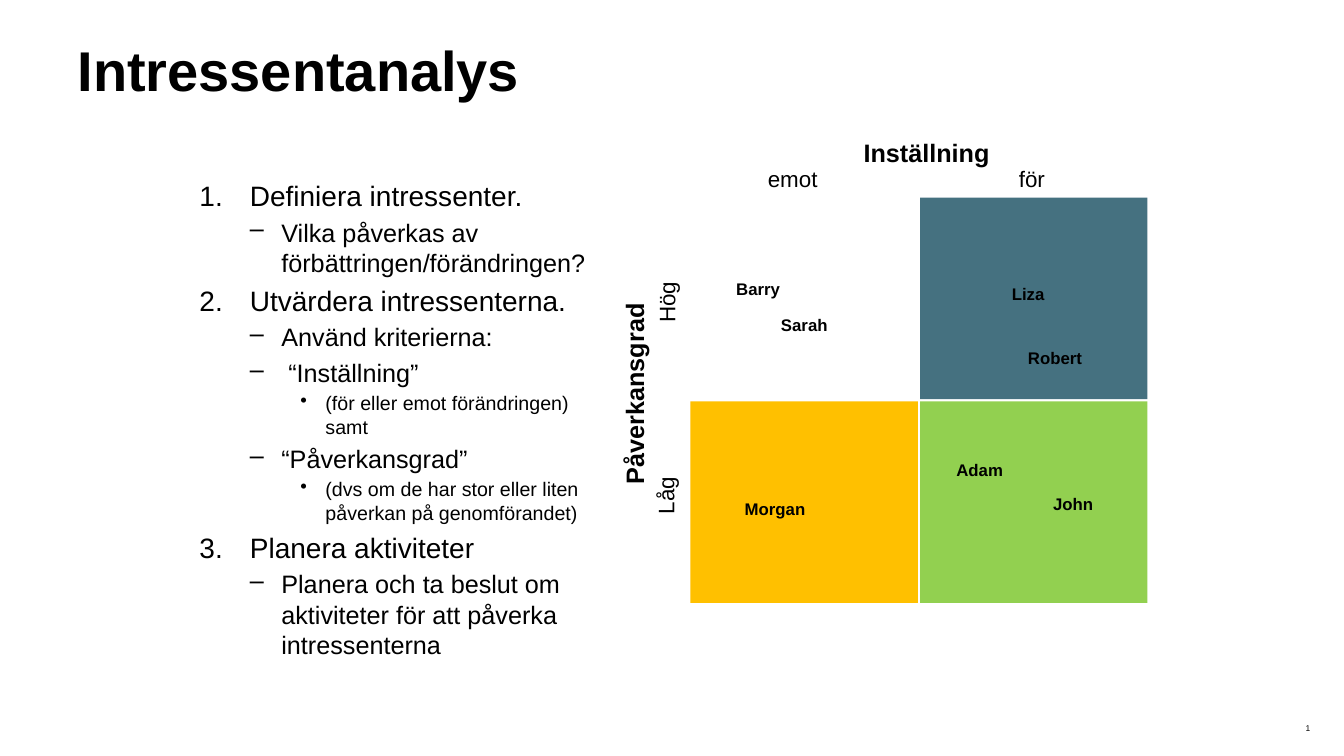
from dataclasses import dataclass

import lxml.etree
import pptx
import pptx.dml.color
import pptx.enum.shapes
import pptx.enum.text
import pptx.oxml.ns
import pptx.util

Pt = pptx.util.Pt
FONT = "Arial"
COLOURS = {
    "text": "000000",
    "high_against": "FFFFFF",
    "high_for": "457180",
    "low_against": "FFC000",
    "low_for": "92D050",
}


@dataclass
class Label:
    text: str
    left: float
    top: float
    width: float
    height: float = 21.6
    size: float = 12
    bold: bool = True
    rotation: float = 0


@dataclass
class Level:
    size: float
    space: float
    margin: float
    hanging: float
    tag: str
    bullet: dict[str, str]


@dataclass
class Item:
    level: int
    text: str


LEVELS = [
    Level(20, 4, 36, 36, "a:buAutoNum", {"type": "arabicPeriod"}),
    Level(18, 3.6, 58.5, 22.5, "a:buChar", {"char": "–"}),
    Level(14, 2.8, 90, 18, "a:buChar", {"char": "•"}),
]

ITEMS = [
    Item(0, "Definiera intressenter."),
    Item(1, "Vilka påverkas av förbättringen/förändringen?"),
    Item(0, "Utvärdera intressenterna."),
    Item(1, "Använd kriterierna:"),
    Item(1, " “Inställning”"),
    Item(2, "(för eller emot förändringen) samt"),
    Item(1, "“Påverkansgrad”"),
    Item(2, "(dvs om de har stor eller liten påverkan på genomförandet)"),
    Item(0, "Planera aktiviteter"),
    Item(1, "Planera och ta beslut om aktiviteter för att påverka intressenterna"),
]

LABELS = [
    Label(" Påverkansgrad", 378, 268.6, 149.8, 28.8, 18, rotation=270),
    Label("Inställning", 609.8, 94.3, 105.1, 28.8, 18),
    Label("emot", 541.4, 114.5, 50.4, 26.6, 16, False),
    Label("för", 720.7, 114.5, 33.8, 26.6, 16, False),
    Label("Låg", 455, 340.6, 41, 26.6, 16, False, 270),
    Label("Hög", 454.3, 202.3, 43.9, 26.6, 16, False, 270),
    Label("Sarah", 550.8, 221, 47.5),
    Label("Adam", 676.1, 324.7, 47.5),
    Label("John", 745.2, 349.2, 43.2),
    Label("Robert", 727.2, 244.8, 53.3),
    Label("Liza", 715.7, 199.4, 38.2),
    Label("Barry", 518.8, 195.8, 48),
    Label("Morgan", 524.9, 352.8, 57.6),
]

QUADRANTS = [["high_against", "high_for"], ["low_against", "low_for"]]
MATRIX_LEFT, MATRIX_TOP = 493.2, 141.1
QUADRANT_WIDTH, QUADRANT_HEIGHT, GAP = 162.4, 144, 1.6


def colour(name: str) -> pptx.dml.color.RGBColor:
    return pptx.dml.color.RGBColor.from_string(COLOURS[name])


def style(font: pptx.text.text.Font, size: float, bold: bool = False) -> None:
    font.name = FONT
    font.size = Pt(size)
    font.bold = bold
    font.color.rgb = colour("text")


def add_title(page: pptx.slide.Slide, text: str) -> None:
    title = page.shapes.title
    title.left, title.top, title.width, title.height = Pt(48.2), Pt(21.6), Pt(864), Pt(90)
    frame = title.text_frame
    frame.text = text
    frame.vertical_anchor = pptx.enum.text.MSO_ANCHOR.TOP
    para = frame.paragraphs[0]
    para.alignment = pptx.enum.text.PP_ALIGN.LEFT
    style(para.runs[0].font, 40, True)


def add_quadrants(page: pptx.slide.Slide) -> None:
    for row, names in enumerate(QUADRANTS):
        for column, name in enumerate(names):
            quadrant = page.shapes.add_shape(
                pptx.enum.shapes.MSO_SHAPE.RECTANGLE,
                Pt(MATRIX_LEFT + column * (QUADRANT_WIDTH + GAP)),
                Pt(MATRIX_TOP + row * (QUADRANT_HEIGHT + GAP)),
                Pt(QUADRANT_WIDTH),
                Pt(QUADRANT_HEIGHT),
            )
            quadrant.shadow.inherit = False
            quadrant.fill.solid()
            quadrant.fill.fore_color.rgb = colour(name)
            quadrant.line.fill.background()


def add_label(page: pptx.slide.Slide, label: Label) -> None:
    box = page.shapes.add_textbox(Pt(label.left), Pt(label.top), Pt(label.width), Pt(label.height))
    box.rotation = label.rotation
    frame = box.text_frame
    frame.word_wrap = False
    frame.auto_size = pptx.enum.text.MSO_AUTO_SIZE.SHAPE_TO_FIT_TEXT
    frame.text = label.text
    style(frame.paragraphs[0].runs[0].font, label.size, label.bold)


def add_steps(page: pptx.slide.Slide, items: list[Item]) -> None:
    box = page.shapes.add_textbox(Pt(135.4), Pt(123.8), Pt(290.9), Pt(356.4))
    frame = box.text_frame
    frame.word_wrap = True
    for index, item in enumerate(items):
        level = LEVELS[item.level]
        para = frame.add_paragraph() if index else frame.paragraphs[0]
        para.text = item.text
        para.level = item.level
        para.space_before = Pt(level.space if index else 0)
        properties = para._p.get_or_add_pPr()
        properties.set("marL", str(Pt(level.margin)))
        properties.set("indent", str(-Pt(level.hanging)))
        lxml.etree.SubElement(properties, pptx.oxml.ns.qn(level.tag), level.bullet)
        style(para.runs[0].font, level.size)


def add_page_number(page: pptx.slide.Slide) -> None:
    box = page.shapes.add_textbox(Pt(887.8), Pt(516.2), Pt(48.2), Pt(7.2))
    frame = box.text_frame
    frame.margin_left = frame.margin_right = frame.margin_top = frame.margin_bottom = 0
    frame.word_wrap = True
    frame.text = "1"
    para = frame.paragraphs[0]
    para.alignment = pptx.enum.text.PP_ALIGN.RIGHT
    span = para.runs[0]
    style(span.font, 6)
    field = span._r
    field.tag = pptx.oxml.ns.qn("a:fld")
    field.set("id", "{B6F15528-21DE-4FAA-801E-634DDDAF4B2B}")
    field.set("type", "slidenum")


def main() -> None:
    deck = pptx.Presentation()
    deck.slide_width, deck.slide_height = Pt(960), Pt(540)
    page = deck.slides.add_slide(deck.slide_layouts[5])
    add_title(page, "Intressentanalys")
    add_steps(page, ITEMS)
    add_quadrants(page)
    for label in LABELS:
        add_label(page, label)
    add_page_number(page)
    deck.save("out.pptx")


if __name__ == "__main__":
    main()
